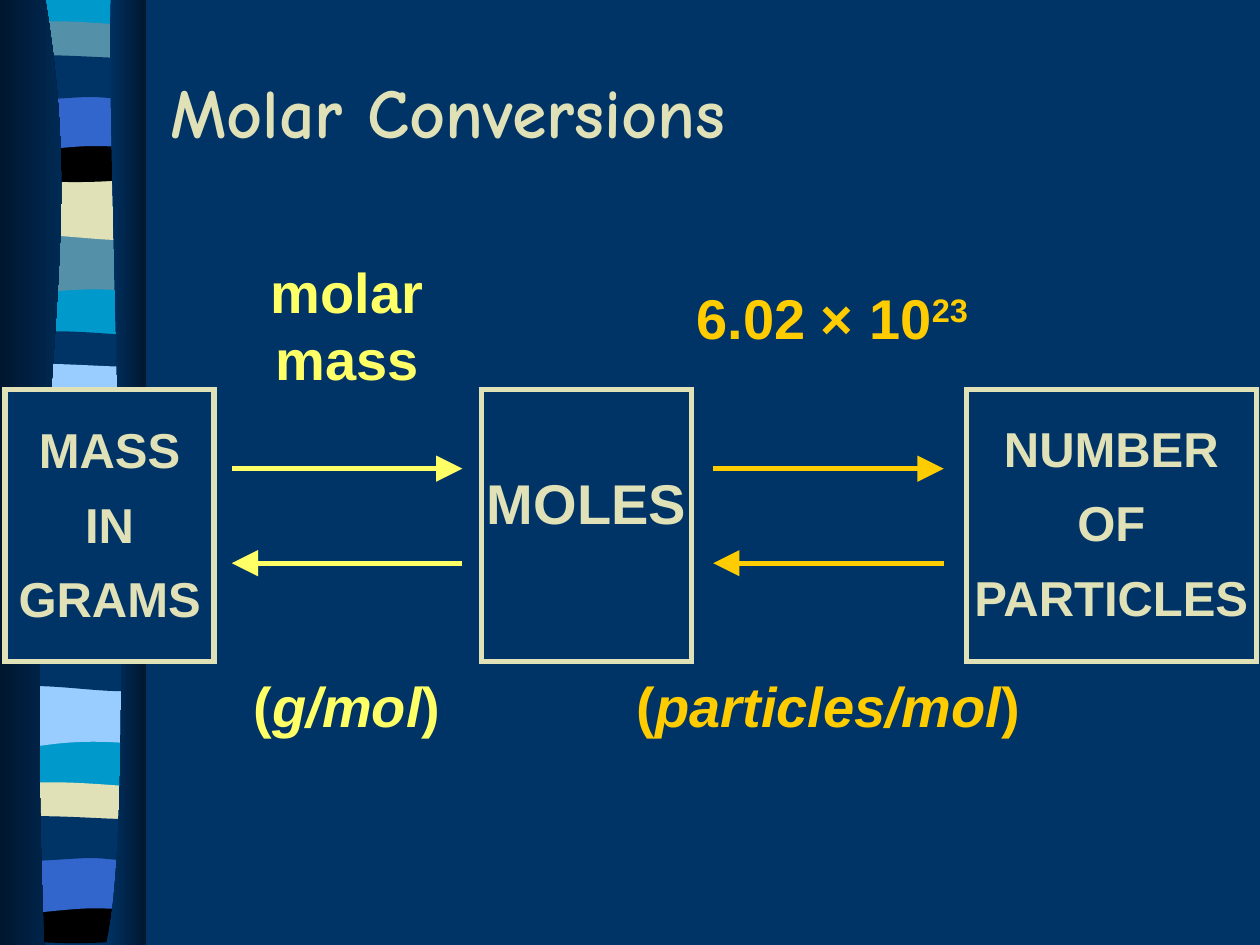
import pptx
import pptx.util
import pptx.dml.color
import pptx.enum.shapes
import pptx.enum.text
import pptx.oxml
import pptx.oxml.ns
from pptx.util import Inches, Pt

RGBColor = pptx.dml.color.RGBColor
NAVY = RGBColor(0x00, 0x33, 0x66)
DARK = RGBColor(0x00, 0x17, 0x2F)
CYAN = RGBColor(0x00, 0x99, 0xCC)
TEAL = RGBColor(0x54, 0x90, 0xA8)
BLUE = RGBColor(0x33, 0x66, 0xCC)
SKY = RGBColor(0x99, 0xCC, 0xFF)
BLACK = RGBColor(0x00, 0x00, 0x00)
CREAM = RGBColor(0xE1, 0xE1, 0xB7)
YELLOW = RGBColor(0xFF, 0xFF, 0x66)
GOLD = RGBColor(0xFF, 0xCC, 0x00)
NAMESPACE = pptx.oxml.ns.nsdecls("a")

presentation = pptx.Presentation()
presentation.slide_width = Inches(10)
presentation.slide_height = Inches(7.5)
slide = presentation.slides.add_slide(presentation.slide_layouts[5])
slide.background.fill.solid()
slide.background.fill.fore_color.rgb = NAVY


def add_outline(segments, offset=0):
    corners = [(Inches(x), Inches(y + offset)) for segment in segments for x, y in segment]
    builder = slide.shapes.build_freeform(*corners[0])
    builder.add_line_segments(corners[1:], close=True)
    shape = builder.convert_to_shape()
    shape.shadow.inherit = False
    shape.line.fill.background()
    lines = iter(shape._element.findall(".//" + pptx.oxml.ns.qn("a:lnTo")))
    for segment in segments[1:]:
        steps = [next(lines) for point in segment]
        if len(steps) == 3:
            bend = pptx.oxml.parse_xml(f"<a:cubicBezTo {NAMESPACE}/>")
            steps[0].addprevious(bend)
            for step in steps:
                bend.append(step[0])
                step.getparent().remove(step)
    return shape


LEFT, RIGHT = 0.05, 1.14
plain = [[(RIGHT, 0)], [(RIGHT, 7.47)], [(LEFT, 7.47)], [(LEFT, 0)]]
swell = [[(RIGHT, 0)], [(RIGHT, 0.47)],
         [(0.39, 0.39), (0.24, 0.55), (LEFT, 0.47)], [(LEFT, 0)]]
dip = [[(RIGHT, 0)], [(RIGHT, 0.47)],
       [(0.96, 0.55), (0.39, 0.41), (LEFT, 0.47)], [(LEFT, 0)]]
wave = [[(RIGHT, 0.05)], [(RIGHT, 0.29)],
        [(0.96, 0.34), (0.24, 0.34), (LEFT, 0.29)], [(LEFT, 0.05)],
        [(0.12, 0), (0.29, 0.01), (0.47, 0.01)],
        [(0.65, 0.01), (1, 0.04), (RIGHT, 0.05)]]
bowl = [[(RIGHT, 0)], [(RIGHT, 0.32)],
        [(0.96, 0.38), (0.24, 0.38), (LEFT, 0.32)], [(LEFT, 0)],
        [(0.72, 0.05), (0.91, 0), (RIGHT, 0)]]
crest = [[(RIGHT, 0)], [(RIGHT, 0.47)],
         [(0.97, 0.42), (0.9, 0.42), (0.72, 0.42)],
         [(0.54, 0.42), (0.22, 0.47), (LEFT, 0.47)], [(LEFT, 0)]]
slab = [[(RIGHT, 0.05)], [(RIGHT, 0.36)],
        [(1.07, 0.41), (0.9, 0.36), (0.72, 0.36)],
        [(0.54, 0.36), (0.17, 0.41), (LEFT, 0.36)], [(LEFT, 0.05)],
        [(0.21, 0), (0.79, 0.05), (0.97, 0.05)],
        [(1.15, 0.05), (1.1, 0.05), (RIGHT, 0.05)]]
bands = [
    (plain, 0, CYAN), (swell, 1.85, TEAL), (dip, 1.41, CREAM), (wave, 0.16, TEAL),
    (bowl, 1.08, BLACK), (crest, 0.74, BLUE), (slab, 0.41, NAVY), (wave, 2.62, NAVY),
    (slab, 2.86, SKY), (swell, 5.44, SKY), (dip, 4.99, NAVY), (wave, 6.2, CREAM),
    (bowl, 7.12, BLACK), (crest, 6.79, BLUE), (slab, 6.45, NAVY),
]
for profile, top, color in bands:
    band = add_outline(profile, top)
    band.fill.solid()
    band.fill.fore_color.rgb = color

left_edge = [[(0.36, 0)], [(0.72, 2.16), (0.17, 2.96), (0.35, 7.5)], [(0, 7.5)], [(0, 0)]]
right_edge = [[(0.88, 0)], [(0.84, 1.25), (1.11, 6.46), (0.84, 7.5)],
              [(1.16, 7.5)], [(1.16, 0)]]
for edge, colors in ((left_edge, (DARK, NAVY)), (right_edge, (NAVY, DARK))):
    panel = add_outline(edge)
    panel.fill.gradient()
    panel.fill.gradient_angle = 0
    for stop, color in zip(panel.fill.gradient_stops, colors):
        stop.color.rgb = color

title = slide.shapes.title
title.left, title.top, title.width, title.height = (
    Inches(1.25), Inches(0.25), Inches(8.75), Inches(1.25))
title.text_frame.text = "Molar Conversions"
title.text_frame.vertical_anchor = pptx.enum.text.MSO_ANCHOR.MIDDLE
paragraph = title.text_frame.paragraphs[0]
paragraph.alignment = pptx.enum.text.PP_ALIGN.LEFT
paragraph.font.name = "Comic Neue"
paragraph.font.size = Pt(40)
paragraph.font.bold = True
paragraph.font.color.rgb = CREAM


def write_text(shape, paragraphs, size, color, top_inset=0.01):
    frame = shape.text_frame
    frame.word_wrap = True
    frame.vertical_anchor = pptx.enum.text.MSO_ANCHOR.TOP
    frame.margin_left = frame.margin_right = frame.margin_bottom = Inches(0.01)
    frame.margin_top = Inches(top_inset)
    for index, runs in enumerate(paragraphs):
        paragraph = frame.add_paragraph() if index else frame.paragraphs[0]
        paragraph.alignment = pptx.enum.text.PP_ALIGN.CENTER
        paragraph.space_before = Pt(9 if index else 0)
        paragraph.font.name = "Arial"
        paragraph.font.size = Pt(size)
        paragraph.font.bold = True
        paragraph.font.color.rgb = color
        for text, style in runs:
            run = paragraph.add_run()
            run.text = text
            if style == "italic":
                run.font.italic = True
            if style == "superscript":
                run.font._element.set("baseline", "30000")


labels = [
    (1.59, 2.03, 2.33, 1.02, YELLOW, [("molar mass", None)]),
    (1.93, 5.32, 1.65, 0.74, YELLOW, [("(", None), ("g/mol", "italic"), (")", None)]),
    (5.44, 2.24, 2.33, 0.61, GOLD, [("6.02 × 10", None), ("23", "superscript")]),
    (4.75, 5.32, 3.65, 0.74, GOLD, [("(", None), ("particles/mol", "italic"), (")", None)]),
]
for left, top, width, height, color, runs in labels:
    label = slide.shapes.add_textbox(Inches(left), Inches(top), Inches(width), Inches(height))
    write_text(label, [runs], 32, color)

boxes = [
    (0.04, 1.66, ["MASS", "IN", "GRAMS"], 28, 0.24, True),
    (3.82, 1.67, ["MOLES"], 32, 0.63, False),
    (7.67, 2.30, ["NUMBER", "OF", "PARTICLES"], 28, 0.23, False),
]
for left, width, words, size, top_inset, filled in boxes:
    box = slide.shapes.add_shape(pptx.enum.shapes.MSO_SHAPE.RECTANGLE,
                                 Inches(left), Inches(3.09), Inches(width), Inches(2.16))
    box.shadow.inherit = False
    if filled:
        box.fill.solid()
        box.fill.fore_color.rgb = NAVY
    else:
        box.fill.background()
    box.line.color.rgb = CREAM
    box.line.width = Pt(3)
    box.line._get_or_add_ln().append(
        pptx.oxml.parse_xml(f'<a:miter {NAMESPACE} lim="800000"/>'))
    write_text(box, [[(word, None)] for word in words], size, CREAM, top_inset)

for y, end in ((3.72, "tailEnd"), (4.47, "headEnd")):
    for left, color in ((1.84, YELLOW), (5.66, GOLD)):
        arrow = slide.shapes.add_connector(
            pptx.enum.shapes.MSO_CONNECTOR.STRAIGHT,
            Inches(left), Inches(y), Inches(left + 1.83), Inches(y))
        arrow.line.color.rgb = color
        arrow.line.width = Pt(3)
        arrow.line._get_or_add_ln().append(pptx.oxml.parse_xml(
            f'<a:{end} {NAMESPACE} type="triangle" w="lg" len="lg"/>'))
        arrow._element.spPr.append(pptx.oxml.parse_xml(f"<a:effectLst {NAMESPACE}/>"))

presentation.save("out.pptx")
